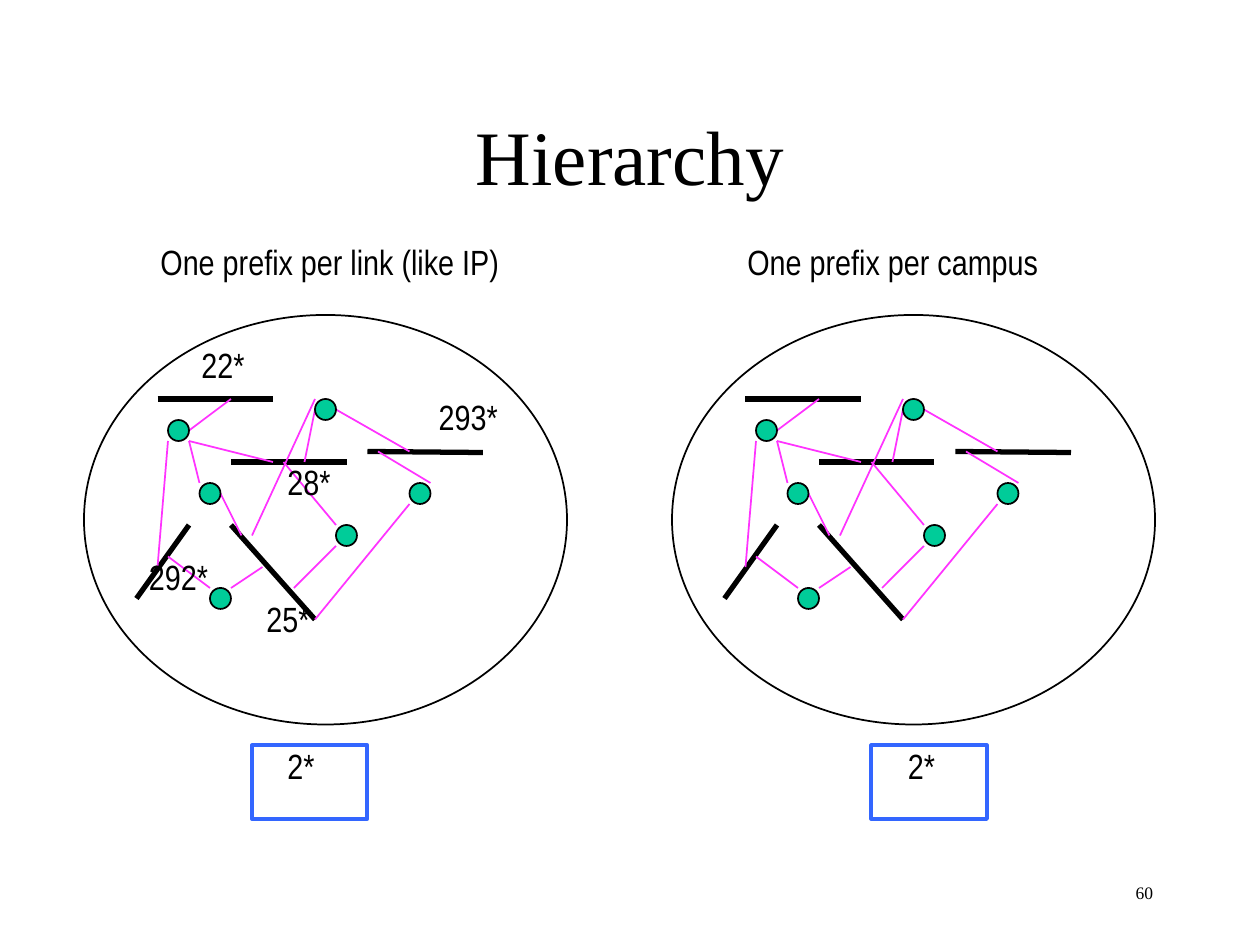
"""Build the Hierarchy slide: one prefix per link beside one prefix per campus."""
from dataclasses import dataclass

from lxml.etree import SubElement
from pptx import Presentation
from pptx.dml.color import RGBColor
from pptx.enum.shapes import MSO_CONNECTOR, MSO_SHAPE
from pptx.enum.text import MSO_ANCHOR, MSO_AUTO_SIZE, PP_ALIGN
from pptx.oxml.ns import qn
from pptx.util import Inches, Pt


@dataclass(frozen=True)
class Theme:
    ink: RGBColor = RGBColor.from_string("000000")
    node: RGBColor = RGBColor.from_string("00CC99")
    path_line: RGBColor = RGBColor.from_string("FF33FF")
    frame: RGBColor = RGBColor.from_string("3366FF")
    serif: str = "Times New Roman"
    sans: str = "Arial Narrow"
    title_size: int = 44
    label_size: int = 20
    number_size: int = 10


theme = Theme()
deck = Presentation()
deck.slide_width, deck.slide_height = Inches(10), Inches(7.5)
page = deck.slides.add_slide(deck.slide_layouts[5])
cell = deck.slide_width / 120


def cells(*values):
    return [round(value * cell) for value in values]


def write(box, text, font, size, align=PP_ALIGN.LEFT, spacing=1.0, before=0):
    box.text_frame.text = text
    paragraph = box.text_frame.paragraphs[0]
    paragraph.alignment = align
    paragraph.line_spacing = spacing
    paragraph.space_before = Pt(before)
    span = paragraph.runs[0]
    span.font.name, span.font.size = font, Pt(size)
    span.font.color.rgb = theme.ink


title = page.shapes.title
title.left, title.top, title.width, title.height = cells(9, 8, 102, 15)
title.text_frame.vertical_anchor = MSO_ANCHOR.MIDDLE
write(title, "Hierarchy", theme.serif, theme.title_size, PP_ALIGN.CENTER, 0.84)

number = page.shapes.add_textbox(*cells(85, 82, 26, 6))
number.text_frame.word_wrap = True
number.text_frame.vertical_anchor = MSO_ANCHOR.MIDDLE
write(number, "60", theme.serif, theme.number_size, PP_ALIGN.RIGHT)

links = [
    (15, 38, 26, 38), (22, 44, 33, 44), (35, 43, 46, 43.1),
    (22, 50, 30, 59), (18, 50, 13, 57),
]
nodes = [(32, 50), (30, 38), (39, 46), (16, 40), (19, 46), (20, 56)]
attachments = [
    (16, 53, 20, 56), (18, 42, 19, 46), (15, 54, 16, 42), (25, 54, 22, 56),
    (30, 39, 29, 44), (39, 43, 32, 39), (32, 50, 27, 44), (39, 48, 30, 59),
    (32, 52, 28, 56), (26, 44, 18, 42), (18, 41, 22, 38), (30, 38, 24, 51),
    (23, 51, 21, 47), (36, 43, 41, 46),
]

for campus, prefix_column in ((0, 24), (56, 83)):
    outlines = [(MSO_SHAPE.OVAL, (8 + campus, 30, 46, 39), None, theme.ink, 1)]
    outlines += [
        (MSO_SHAPE.OVAL, (column + campus, row, 2, 2), theme.node, theme.ink, 1)
        for column, row in nodes
    ]
    outlines.append(
        (MSO_SHAPE.RECTANGLE, (prefix_column, 71, 11, 7), None, theme.frame, 2.25)
    )
    strokes = [(ends, theme.ink, 3) for ends in links]
    strokes += [(ends, theme.path_line, 1) for ends in attachments]

    for (x1, y1, x2, y2), color, weight in strokes:
        line = page.shapes.add_connector(
            MSO_CONNECTOR.STRAIGHT, *cells(x1 + campus, y1, x2 + campus, y2)
        )
        line.line.color.rgb, line.line.width = color, Pt(weight)
        SubElement(line._element.spPr, qn("a:effectLst"))

    for kind, area, fill, color, weight in outlines:
        shape = page.shapes.add_shape(kind, *cells(*area))
        shape.shadow.inherit = False
        if fill is None:
            shape.fill.background()
        else:
            shape.fill.solid()
            shape.fill.fore_color.rgb = fill
        shape.line.color.rgb, shape.line.width = color, Pt(weight)

labels = [
    ("One prefix per link (like IP)", 14.1, 23, 35),
    ("One prefix per campus", 70, 23, 31),
    ("22*", 18, 32.8, 7.4),
    ("293*", 40.6, 37.8, 8),
    ("28*", 26.2, 44, 7.4),
    ("292*", 13, 53, 9.1),
    ("25*", 24.2, 57, 7.4),
    ("2*", 26.2, 71, 5.8),
    ("2*", 85.3, 71, 5.8),
]
for text, column, row, width in labels:
    label = page.shapes.add_textbox(*cells(column, row, width, 5.2))
    label.text_frame.word_wrap = False
    label.text_frame.auto_size = MSO_AUTO_SIZE.SHAPE_TO_FIT_TEXT
    write(label, text, theme.sans, theme.label_size, spacing=0.82, before=7.2)

deck.save("out.pptx")
